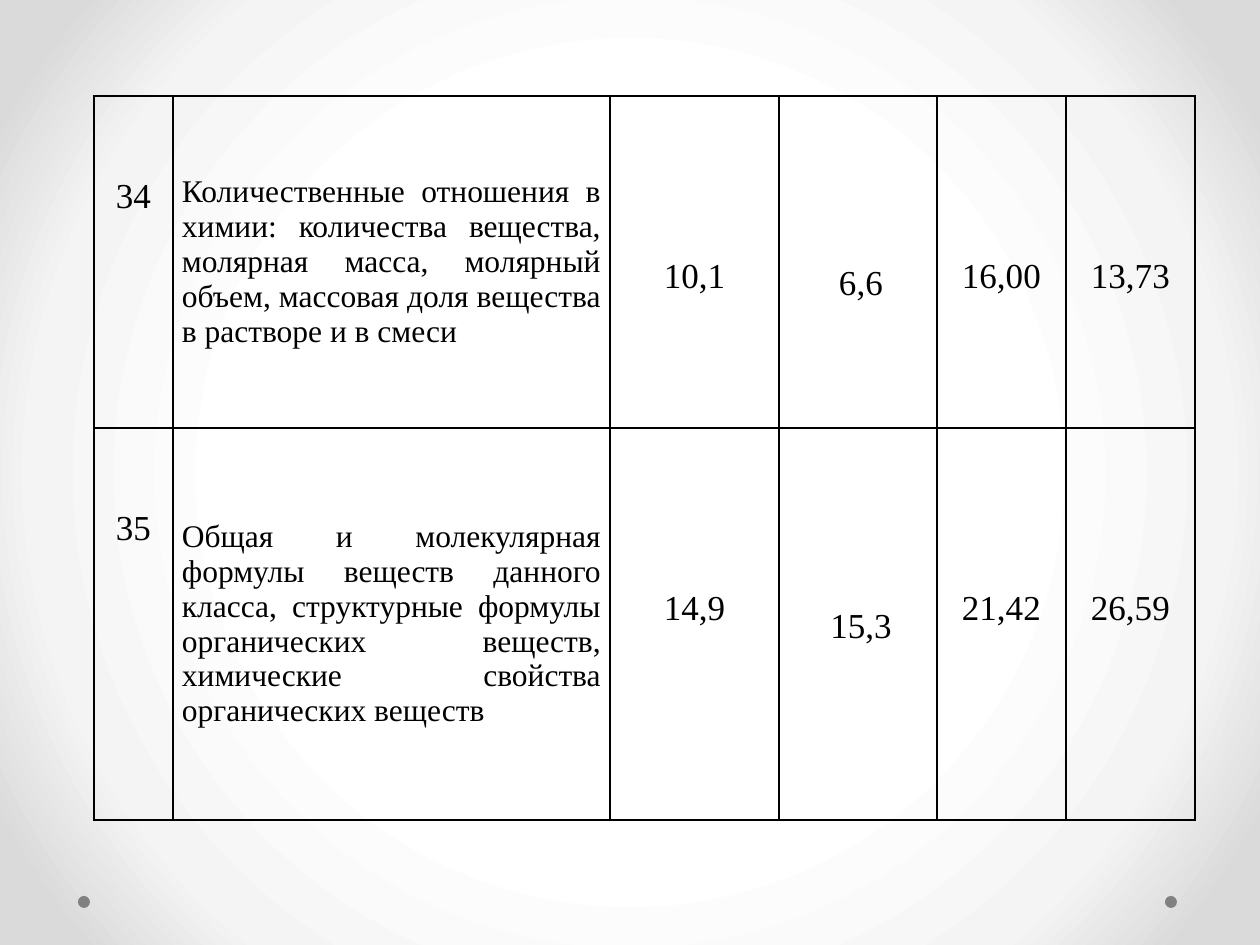
"""Build a slide with a two-row table of topics and results."""
from dataclasses import dataclass
from typing import Any

from lxml import etree
from pptx import Presentation, util as u
from pptx.dml import color
from pptx.enum import shapes, text
from pptx.oxml import ns, parse_xml

SCALE = 914400 / 126
COLORS = {
    "ink": "000000",
    "dot": "808080",
    "center": "FFFFFF",
    "middle": "F4F4F4",
    "edge": "DADADA",
}
FONT = "Times New Roman"
GRADIENT_STOPS = ((50, "center"), (76, "middle"), (92, "edge"))
COLUMN_WIDTHS = (79, 437, 169, 158, 129, 129)
ROW_HEIGHTS = (332, 392)
DOT_LEFTS = (78, 1165)


@dataclass(frozen=True)
class CellStyle:
    size: int = 20
    alignment: Any = text.PP_ALIGN.CENTER
    anchor: Any = text.MSO_ANCHOR.TOP
    top: int = 0
    indent: int = 0
    line_spacing: float = 1.0


NUMBER = CellStyle(top=81)
TOPIC = CellStyle(18, text.PP_ALIGN.JUSTIFY, text.MSO_ANCHOR.MIDDLE)
RESULT = CellStyle(top=161)
CENTERED = CellStyle(anchor=text.MSO_ANCHOR.MIDDLE, indent=6, line_spacing=1.15)
LOWERED = CellStyle(anchor=text.MSO_ANCHOR.MIDDLE, top=38, indent=6, line_spacing=1.15)

ROWS = (
    (
        ("34", NUMBER),
        ("Количественные отношения в химии: количества вещества, молярная масса, "
         "молярный объем, массовая доля вещества в растворе и в смеси", TOPIC),
        ("10,1", RESULT),
        ("6,6", LOWERED),
        ("16,00", RESULT),
        ("13,73", RESULT),
    ),
    (
        ("35", NUMBER),
        ("Общая и молекулярная формулы веществ данного класса, структурные формулы "
         "органических веществ, химические свойства органических веществ", TOPIC),
        ("14,9", RESULT),
        ("15,3", CENTERED),
        ("21,42", RESULT),
        ("26,59", RESULT),
    ),
)


def px(length: int) -> u.Emu:
    return u.Emu(round(length * SCALE))


def rgb(name: str) -> color.RGBColor:
    return color.RGBColor.from_string(COLORS[name])


def paint_background(slide: Any) -> None:
    fill = slide.background.fill
    fill.gradient()
    gradient = slide._element.find(".//" + ns.qn("a:gradFill"))
    for child in list(gradient):
        gradient.remove(child)
    stops = etree.SubElement(gradient, ns.qn("a:gsLst"))
    for position, name in GRADIENT_STOPS:
        stop = etree.SubElement(stops, ns.qn("a:gs"), pos=str(position * 1000))
        etree.SubElement(stop, ns.qn("a:srgbClr"), val=COLORS[name])
    circle = etree.SubElement(gradient, ns.qn("a:path"))
    circle.set("path", "circle")
    etree.SubElement(circle, ns.qn("a:fillToRect"), l="50000", t="50000", r="50000", b="50000")


def draw_dot(slide: Any, left: int) -> None:
    dot = slide.shapes.add_shape(shapes.MSO_SHAPE.OVAL, px(left), px(896), px(12), px(12))
    dot.shadow.inherit = False
    dot.fill.solid()
    dot.fill.fore_color.rgb = rgb("dot")
    dot.line.fill.background()


def draw_borders(cell: Any) -> None:
    properties = cell._tc.get_or_add_tcPr()
    for index, side in enumerate(("lnL", "lnR", "lnT", "lnB")):
        properties.insert(index, parse_xml(
            f'<a:{side} {ns.nsdecls("a")} w="12700"><a:solidFill>'
            f'<a:srgbClr val="{COLORS["ink"]}"/></a:solidFill></a:{side}>'
        ))


def fill_cell(cell: Any, wording: str, style: CellStyle) -> None:
    cell.fill.background()
    draw_borders(cell)
    cell.margin_left = cell.margin_right = px(9)
    cell.margin_top, cell.margin_bottom = px(style.top), px(0)
    cell.vertical_anchor = style.anchor
    paragraph = cell.text_frame.paragraphs[0]
    paragraph.alignment = style.alignment
    paragraph.line_spacing = style.line_spacing
    paragraph._p.get_or_add_pPr().set("indent", str(px(style.indent)))
    run = paragraph.add_run()
    run.text = wording
    run.font.name = FONT
    run.font.size = u.Pt(style.size)
    run.font.color.rgb = rgb("ink")


def draw_table(slide: Any) -> None:
    frame = slide.shapes.add_table(
        len(ROW_HEIGHTS), len(COLUMN_WIDTHS), px(94), px(96),
        px(sum(COLUMN_WIDTHS)), px(sum(ROW_HEIGHTS)),
    )
    table = frame.table
    table.first_row = table.horz_banding = False
    for column, width in zip(table.columns, COLUMN_WIDTHS):
        column.width = px(width)
    for row, height, entries in zip(table.rows, ROW_HEIGHTS, ROWS):
        row.height = px(height)
        for cell, (wording, style) in zip(row.cells, entries):
            fill_cell(cell, wording, style)


def main() -> None:
    presentation = Presentation()
    presentation.slide_width, presentation.slide_height = px(1260), px(945)
    slide = presentation.slides.add_slide(presentation.slide_layouts[6])
    paint_background(slide)
    for left in DOT_LEFTS:
        draw_dot(slide, left)
    draw_table(slide)
    presentation.save("out.pptx")


if __name__ == "__main__":
    main()
